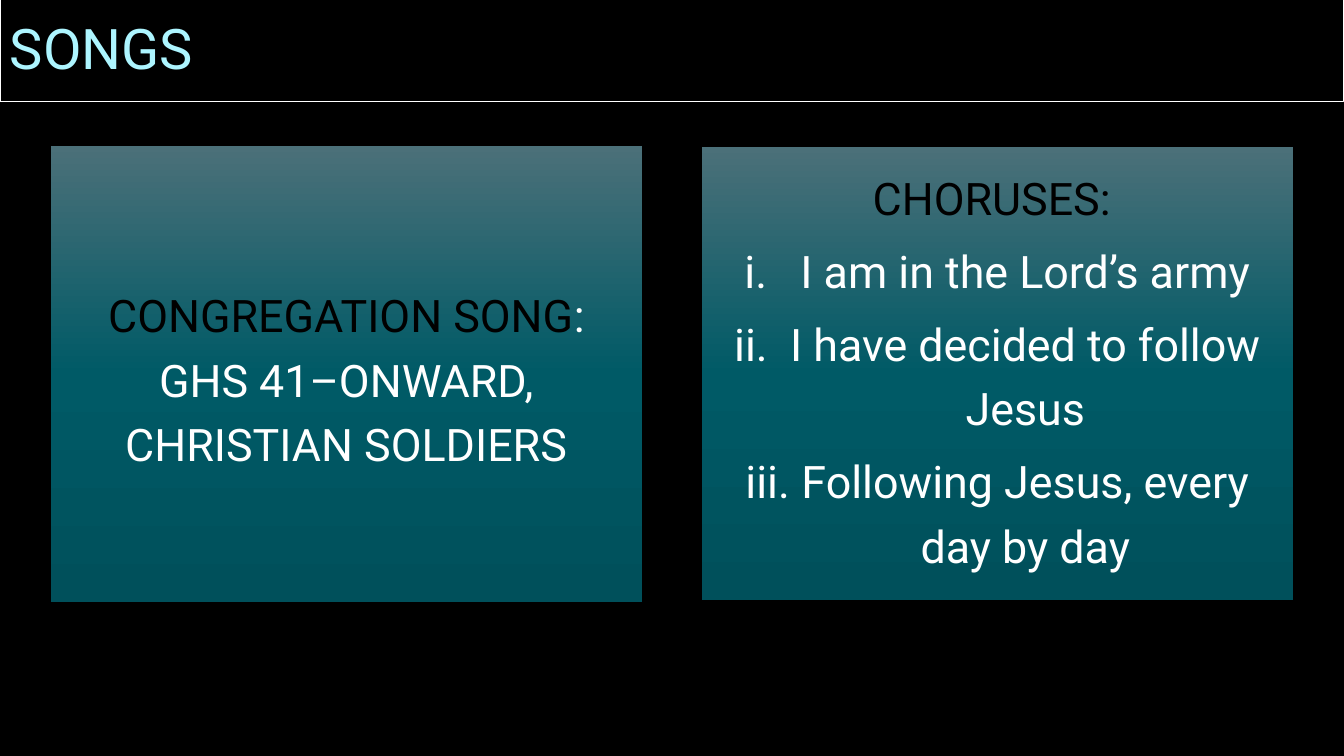
"""Build the songs slide with a title bar and two gradient song panels."""
from copy import deepcopy
from dataclasses import dataclass

from pptx import Presentation
from pptx import util as u
from pptx.dml.color import RGBColor
from pptx.enum import shapes, text
from pptx.oxml.ns import qn
from lxml import etree


@dataclass(frozen=True)
class Theme:
    font: str = "Roboto"
    title_size: int = 40
    body_size: int = 32
    page: str = "000000"
    heading: str = "000000"
    body: str = "FFFFFF"
    border: str = "FFFFFF"
    title: str = "ADF5FF"
    gradient: tuple = ("4B7079", "005A66", "00505B")


class SongSlide:
    scale = 914400 / 100.8

    def __init__(self, deck, theme):
        self.theme = theme
        deck.slide_width, deck.slide_height = self.px(1344), self.px(756)
        self.page = deck.slides.add_slide(deck.slide_layouts[6])
        self.page.background.fill.solid()
        self.page.background.fill.fore_color.rgb = RGBColor.from_string(theme.page)

    def px(self, length):
        return u.Emu(round(length * self.scale))

    def style(self, span, size, color):
        span.font.name = self.theme.font
        span.font.size = u.Pt(size)
        span.font.color.rgb = RGBColor.from_string(color)

    def title(self, words, *bounds):
        box = self.page.shapes.add_textbox(*map(self.px, bounds))
        box.line.color.rgb = RGBColor.from_string(self.theme.border)
        box.line.width = u.Pt(0.75)
        frame = box.text_frame
        frame.word_wrap = True
        frame.vertical_anchor = text.MSO_ANCHOR.MIDDLE
        frame.text = words
        para = frame.paragraphs[0]
        para.alignment = text.PP_ALIGN.JUSTIFY
        para.line_spacing = 0.9
        self.style(para.runs[0], self.theme.title_size, self.theme.title)

    def panel(self, anchor, *bounds):
        box = self.page.shapes.add_shape(
            shapes.MSO_SHAPE.RECTANGLE, *map(self.px, bounds))
        box.shadow.inherit = False
        box.line.fill.background()
        self.shade(box.fill)
        frame = box.text_frame
        frame.word_wrap = True
        frame.vertical_anchor = anchor
        frame.margin_left = frame.margin_right = self.px(13)
        frame.margin_top = frame.margin_bottom = self.px(13)
        return frame

    def shade(self, fill):
        fill.gradient()
        fill.gradient_angle = 270
        first = fill._fill._gradFill.find(qn("a:gsLst"))[0]
        first.addnext(deepcopy(first))
        colors = self.theme.gradient
        for index, (stop, color) in enumerate(zip(fill.gradient_stops, colors)):
            stop.position = index / (len(colors) - 1)
            stop.color.rgb = RGBColor.from_string(color)

    def paragraph(self, para, *spans):
        para.alignment = text.PP_ALIGN.CENTER
        para.line_spacing = 1.2
        para.space_after = u.Pt(6)
        for words, color in spans:
            span = para.add_run()
            span.text = words
            self.style(span, self.theme.body_size, color)

    def numbered(self, para, words):
        indent = self.px(56)
        props = para._p.get_or_add_pPr()
        props.set("marL", str(indent))
        props.set("indent", str(-indent))
        etree.SubElement(props, qn("a:buAutoNum"), type="romanLcPeriod")
        self.paragraph(para, (words, self.theme.body))


def main():
    deck = Presentation()
    theme = Theme()
    slide = SongSlide(deck, theme)
    slide.title("SONGS", 0, 0, 1344, 102)

    congregation = slide.panel(text.MSO_ANCHOR.MIDDLE, 51, 146, 591, 456)
    slide.paragraph(congregation.paragraphs[0],
                    ("CONGREGATION SONG", theme.heading),
                    (": GHS 41–ONWARD, CHRISTIAN SOLDIERS", theme.body))

    choruses = slide.panel(text.MSO_ANCHOR.TOP, 702, 147, 591, 453)
    slide.paragraph(choruses.paragraphs[0], ("CHORUSES: ", theme.heading))
    for song in ("I am in the Lord’s army",
                 "I have decided to follow Jesus",
                 "Following Jesus, every day by day"):
        slide.numbered(choruses.add_paragraph(), song)

    deck.save("out.pptx")


if __name__ == "__main__":
    main()
